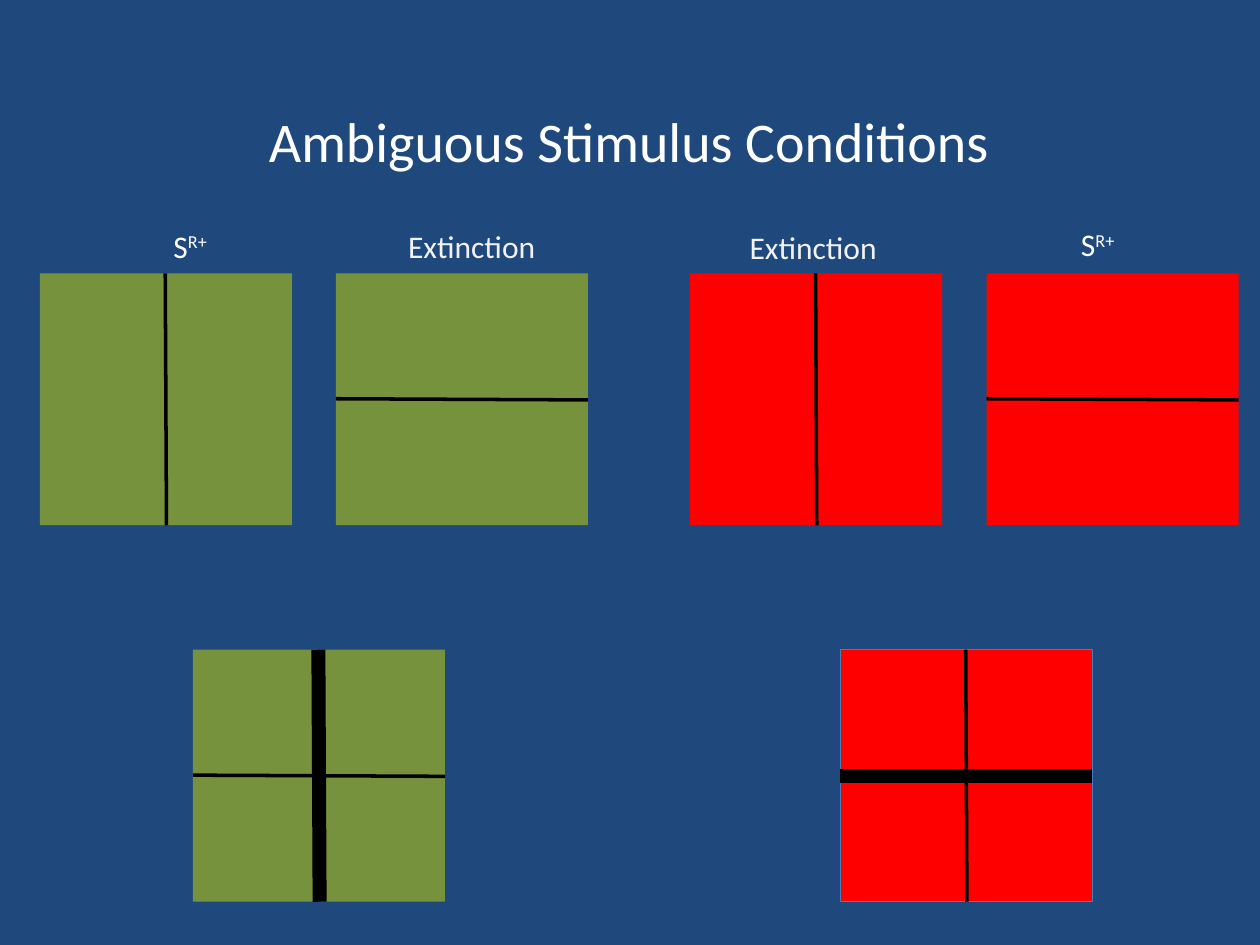
"""Build the slide on ambiguous stimulus conditions."""
from lxml import etree
from pptx import Presentation
from pptx.dml.color import RGBColor
from pptx.enum.shapes import MSO_CONNECTOR, MSO_SHAPE
from pptx.enum.text import PP_ALIGN
from pptx.oxml.ns import qn
from pptx.util import Pt

STRAIGHT = MSO_CONNECTOR.STRAIGHT
RECTANGLE = MSO_SHAPE.RECTANGLE
LEFT, CENTER = PP_ALIGN.LEFT, PP_ALIGN.CENTER

NAVY = RGBColor(0x1F, 0x49, 0x7D)
GREEN = RGBColor(0x76, 0x92, 0x3C)
RED = RGBColor(0xFF, 0x00, 0x00)
BLACK = RGBColor(0x00, 0x00, 0x00)
EDGE_BLUE = RGBColor(0x4A, 0x7D, 0xBA)
WHITE = RGBColor(0xFF, 0xFF, 0xFF)
OFF_WHITE = RGBColor(0xF2, 0xF2, 0xF2)

SIDE = 144
SLANT = 0.7
TRAINING_TOP, TEST_TOP = 156.2, 371.3
THIN, THICK = 2, 8

presentation = Presentation()
presentation.slide_width, presentation.slide_height = Pt(720), Pt(540)
slide = presentation.slides.add_slide(presentation.slide_layouts[6])
slide.background.fill.solid()
slide.background.fill.fore_color.rgb = NAVY


def add_bar(x1, y1, x2, y2, weight):
    bar = slide.shapes.add_connector(STRAIGHT, Pt(x1), Pt(y1), Pt(x2), Pt(y2))
    bar.line.color.rgb = BLACK
    bar.line.width = Pt(weight)
    etree.SubElement(bar._element.spPr, qn("a:effectLst"))


def add_caption(left, top, width, height, words, superscript, size, color, align):
    caption = slide.shapes.add_textbox(Pt(left), Pt(top), Pt(width), Pt(height))
    paragraph = caption.text_frame.paragraphs[0]
    paragraph.text = words
    paragraph.alignment = align
    if superscript:
        raised = paragraph.add_run()
        raised.text = superscript
        raised._r.get_or_add_rPr().set("baseline", "30000")
    for run in paragraph.runs:
        run.font.name = "Calibri"
        run.font.size = Pt(size)
        run.font.color.rgb = color


stimuli = [
    (22.8, TRAINING_TOP, GREEN, None, THIN, None),
    (192, TRAINING_TOP, GREEN, None, None, THIN),
    (394.4, TRAINING_TOP, RED, None, THIN, None),
    (563.8, TRAINING_TOP, RED, None, None, THIN),
    (110.3, TEST_TOP, GREEN, None, THICK, THIN),
    (480.2, TEST_TOP, RED, EDGE_BLUE, THIN, THICK),
]
for left, top, color, edge, vertical, horizontal in stimuli:
    card = slide.shapes.add_shape(RECTANGLE, Pt(left), Pt(top), Pt(SIDE), Pt(SIDE))
    card.shadow.inherit = False
    card.fill.solid()
    card.fill.fore_color.rgb = color
    if edge:
        card.line.color.rgb = edge
        card.line.width = Pt(0.75)
    else:
        card.line.fill.background()
    middle_x, middle_y = left + SIDE / 2, top + SIDE / 2
    if vertical:
        add_bar(middle_x + SLANT / 2, top + SIDE, middle_x - SLANT / 2, top, vertical)
    if horizontal:
        tilt = SLANT if horizontal == THIN else 0
        add_bar(left, middle_y - tilt / 2, left + SIDE, middle_y + tilt / 2, horizontal)

captions = [
    (72.7, 126, 72, 28.8, "S", "R+", 18, WHITE, CENTER),
    (610.6, 125.3, 36, 28.8, "S", "R+", 18, WHITE, LEFT),
    (226.1, 126, 87.8, 28.8, "Extinction", None, 18, OFF_WHITE, LEFT),
    (421.2, 126.7, 87.8, 28.8, "Extinction", None, 18, OFF_WHITE, LEFT),
    (144.7, 57.6, 429.8, 46.1, "Ambiguous Stimulus Conditions", None, 32, WHITE, CENTER),
]
for caption in captions:
    add_caption(*caption)

presentation.save("out.pptx")
